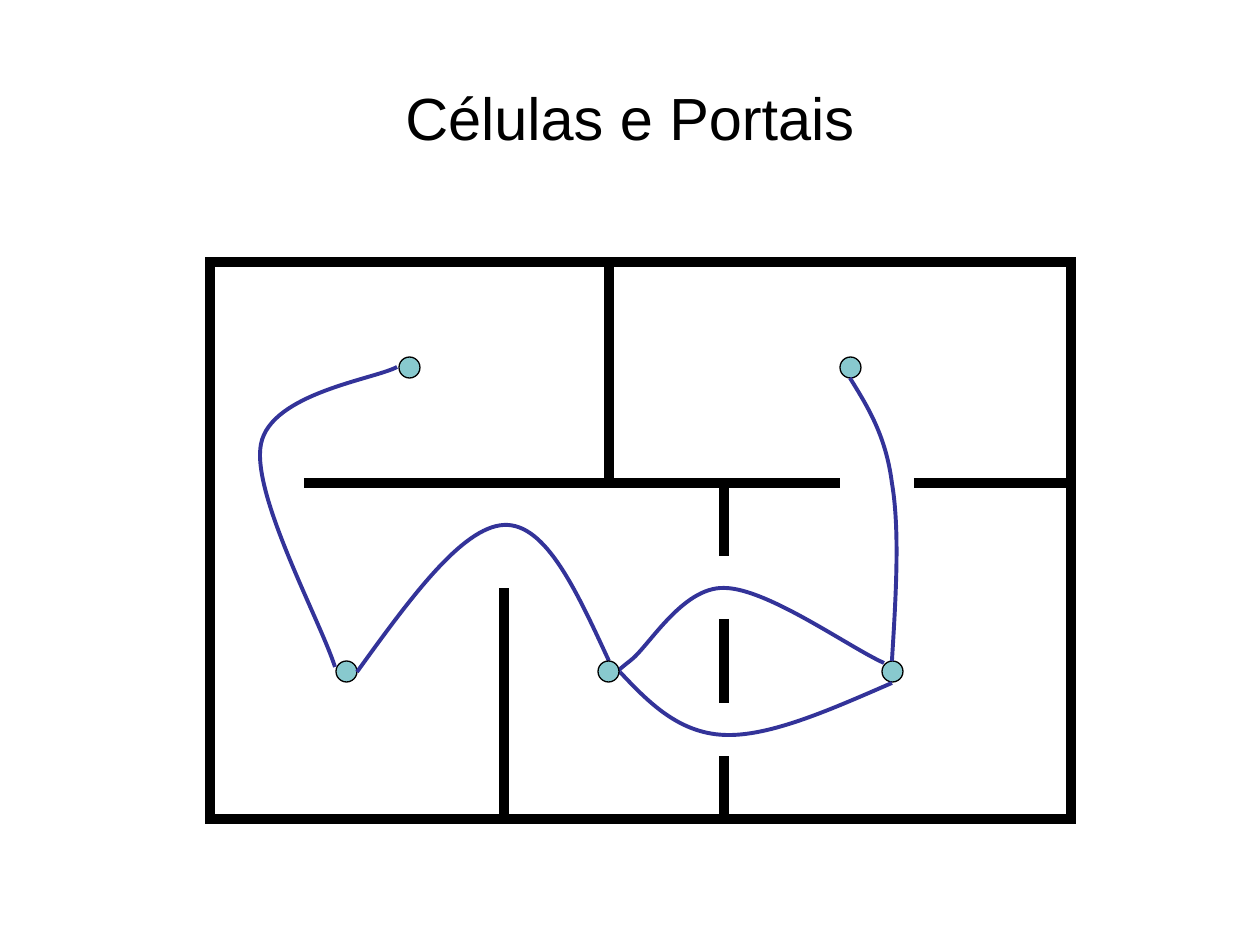
import pptx
import pptx.dml.color
import pptx.enum.shapes
import pptx.enum.text
import pptx.oxml
import pptx.oxml.ns
import pptx.util

SCALE = 914400 / 126  # EMU per px
BLACK, TEAL, BLUE = "000000", "88C9CE", "333399"
WALL, THIN, CURVE = 6, 0.75, 2.25  # line widths in points
DOT = 21


def emu(px):
    return pptx.util.Emu(round(px * SCALE))


def color(value):
    return pptx.dml.color.RGBColor.from_string(value)


class FloorPlan:
    font = "Arial"

    def __init__(self, slide):
        self.slide = slide
        self.shapes = slide.shapes

    def outline(self, s, value, width):
        s.line.color.rgb = color(value)
        s.line.width = pptx.util.Pt(width)

    def title(self, text, x, y, w, h, size):
        tf = self.shapes.add_textbox(*map(emu, (x, y, w, h))).text_frame
        tf.word_wrap = True
        tf.vertical_anchor = pptx.enum.text.MSO_ANCHOR.MIDDLE
        p = tf.paragraphs[0]
        p.text = text
        p.alignment = pptx.enum.text.PP_ALIGN.CENTER
        p.font.name = self.font
        p.font.size = pptx.util.Pt(size)
        p.font.color.rgb = color(BLACK)

    def shape(self, kind, x, y, w, h, fill, width):
        s = self.shapes.add_shape(kind, *map(emu, (x, y, w, h)))
        s.shadow.inherit = False
        if fill:
            s.fill.solid()
            s.fill.fore_color.rgb = color(fill)
        else:
            s.fill.background()
        self.outline(s, BLACK, width)
        return s

    def building(self, x, y, w, h):
        s = self.shape(pptx.enum.shapes.MSO_SHAPE.RECTANGLE, x, y, w, h, None, WALL)
        # Square corners
        ln = s.line._get_or_add_ln()
        ln.append(pptx.oxml.parse_xml(
            f'<a:miter {pptx.oxml.ns.nsdecls("a")} lim="800000"/>'))

    def wall(self, x1, y1, x2, y2):
        s = self.shapes.add_connector(
            pptx.enum.shapes.MSO_CONNECTOR.STRAIGHT, *map(emu, (x1, y1, x2, y2)))
        self.outline(s, BLACK, WALL)
        s._element.spPr.append(pptx.oxml.parse_xml(
            f'<a:effectLst {pptx.oxml.ns.nsdecls("a")}/>'))

    def cell(self, x, y):
        self.shape(pptx.enum.shapes.MSO_SHAPE.OVAL, x, y, DOT, DOT, TEAL, THIN)

    def curve(self, start, *points):
        builder = self.shapes.build_freeform(*start, scale=SCALE)
        builder.add_line_segments(points, close=False)
        s = builder.convert_to_shape()
        s.shadow.inherit = False
        s.fill.background()
        self.outline(s, BLUE, CURVE)
        # Every three points become one cubic Bézier segment
        steps = list(s._element.iter(pptx.oxml.ns.qn("a:lnTo")))
        for i in range(0, len(steps), 3):
            bezier = pptx.oxml.parse_xml(
                f'<a:cubicBezTo {pptx.oxml.ns.nsdecls("a")}/>')
            steps[i].addprevious(bezier)
            for step in steps[i:i + 3]:
                bezier.append(step[0])
                step.getparent().remove(step)


def main():
    prs = pptx.Presentation()
    prs.slide_width, prs.slide_height = emu(1260), emu(945)
    plan = FloorPlan(prs.slides.add_slide(prs.slide_layouts[6]))

    plan.title("Células e Portais", 63, 38, 1134, 157, 34)

    # Rooms
    plan.building(210, 262, 861, 557)
    walls = [
        (504, 819, 504, 588), (304, 483, 840, 483), (724, 483, 724, 556),
        (724, 756, 724, 819), (609, 483, 609, 336), (609, 346, 609, 262),
        (724, 619, 724, 703), (914, 483, 1071, 483),
    ]
    for ends in walls:
        plan.wall(*ends)

    # Cells
    for x, y in [(399, 357), (840, 357), (336, 661), (882, 661)]:
        plan.cell(x, y)

    # Paths through the portals
    plan.curve((397, 367), (376, 379), (271, 393), (261, 444),
               (251, 494), (320, 620), (335, 667))
    plan.curve((357, 672), (409, 600), (462, 527), (504, 525),
               (546, 523), (577, 592), (609, 661))
    plan.curve((620, 672), (616, 674), (612, 675), (630, 661),
               (648, 648), (682, 587), (724, 588),
               (767, 588), (850, 648), (884, 663))
    plan.curve((620, 672), (649, 703), (679, 733), (724, 735),
               (770, 737), (832, 709), (892, 683))
    plan.curve((892, 661), (896, 596), (900, 530), (892, 483),
               (886, 436), (868, 407), (850, 378))

    # The middle cell lies over the paths
    plan.cell(598, 661)

    prs.save("out.pptx")


if __name__ == "__main__":
    main()
